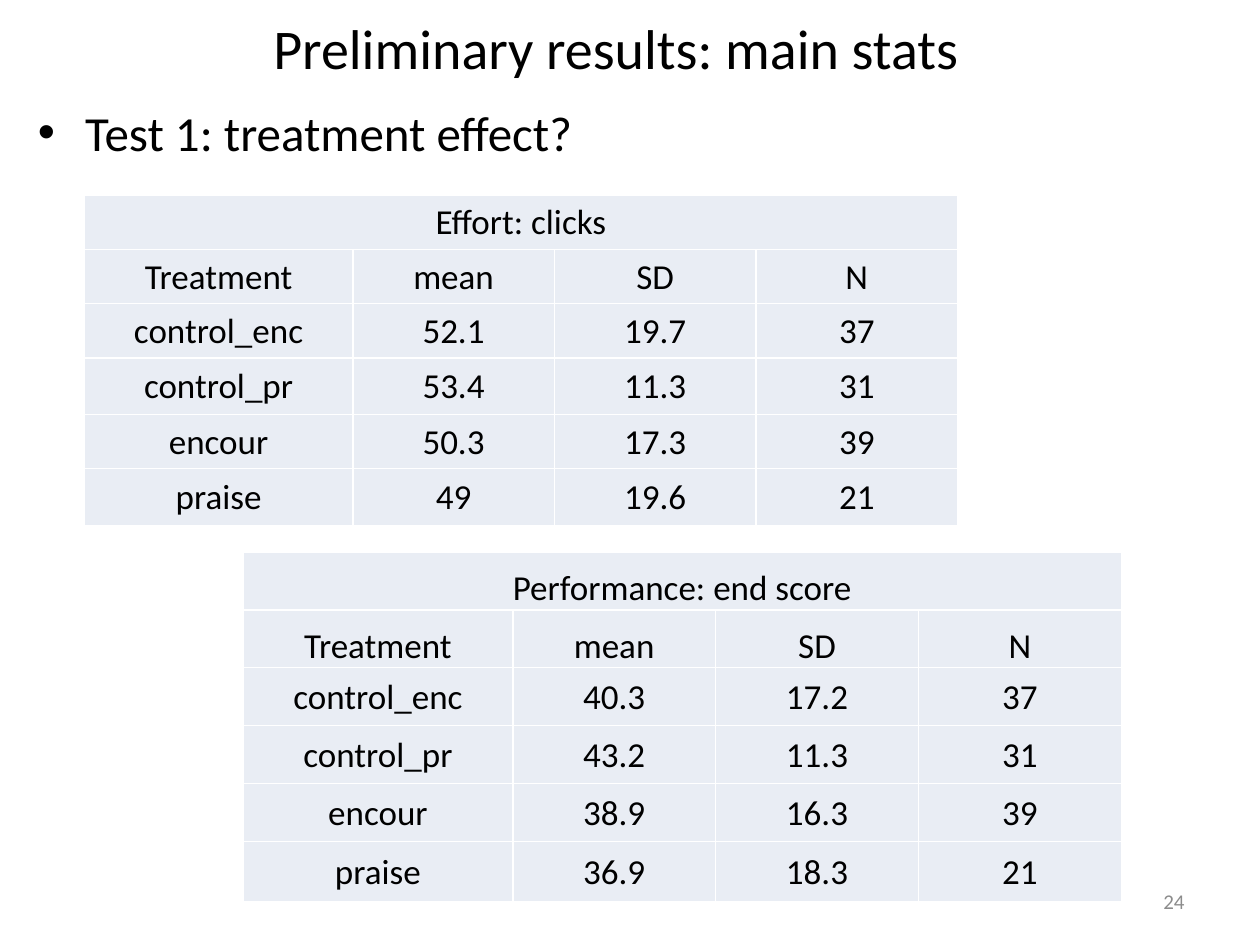
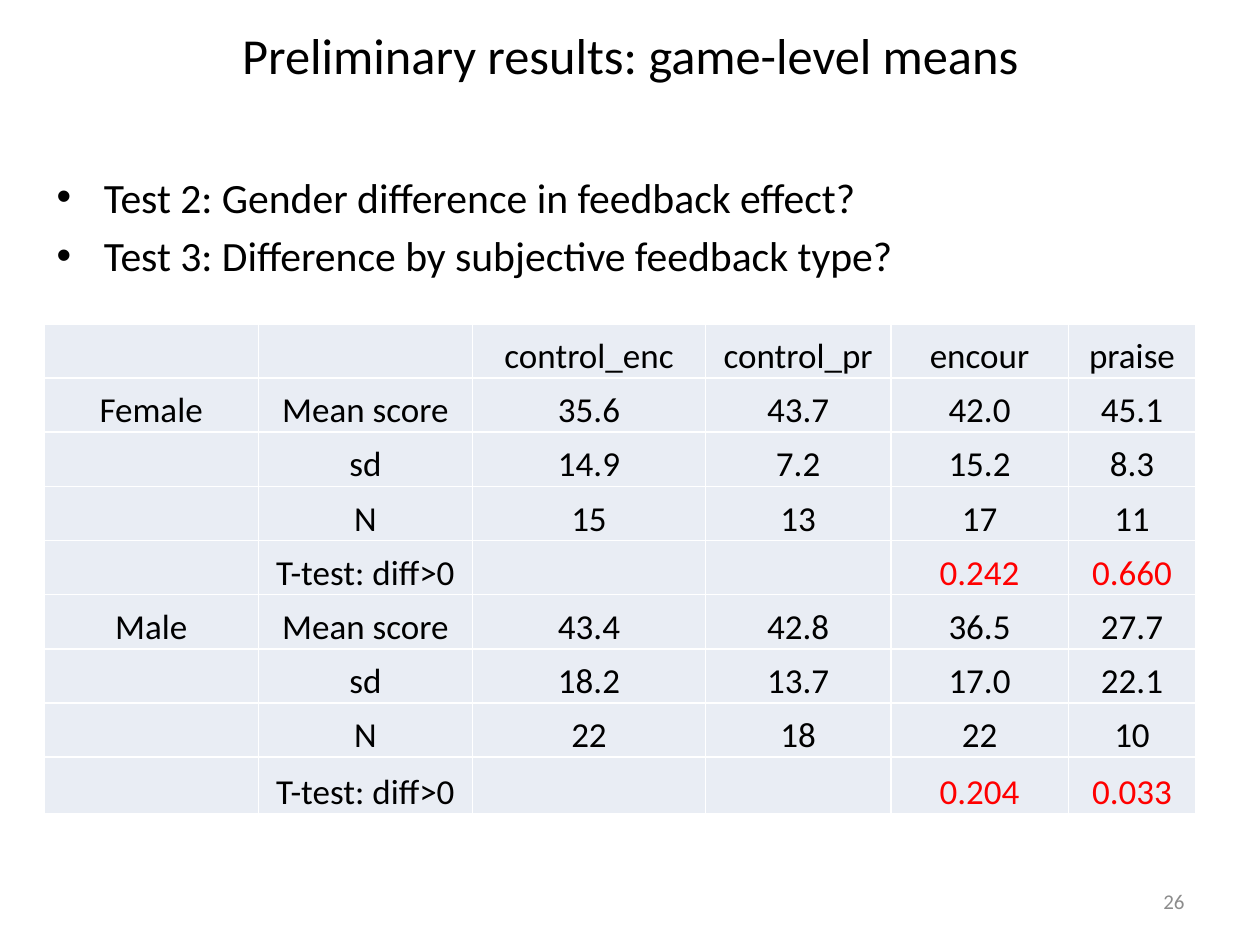
from dataclasses import dataclass

from lxml import etree
from pptx import Presentation
from pptx.dml.color import RGBColor
from pptx.enum.text import MSO_ANCHOR, MSO_AUTO_SIZE, PP_ALIGN
from pptx.oxml.ns import qn
from pptx.util import Inches, Pt

LEFT, CENTER, RIGHT = PP_ALIGN.LEFT, PP_ALIGN.CENTER, PP_ALIGN.RIGHT
TOP, MIDDLE, BOTTOM = MSO_ANCHOR.TOP, MSO_ANCHOR.MIDDLE, MSO_ANCHOR.BOTTOM
NO_AUTOFIT = MSO_AUTO_SIZE.NONE
TITLE_AND_CONTENT = 1


@dataclass(frozen=True)
class Theme:
    font: str = "Calibri"
    text: str = "000000"
    muted: str = "8C8C8C"
    highlight: str = "FF0000"
    cell: str = "E9EDF4"
    border: str = "FFFFFF"
    border_width: float = 1
    table_size: float = 20
    number_size: float = 12
    item_gap: float = 0.2


def write(frame, *lines, size, color, font, align=LEFT, gap=0):
    """Put one paragraph per line into a text frame, gap points apart."""
    for index, line in enumerate(lines):
        paragraph = frame.paragraphs[0] if index == 0 else frame.add_paragraph()
        paragraph.alignment = align
        paragraph.space_before = Pt(gap if index else 0)
        run = paragraph.add_run()
        run.text = line
        run.font.name = font
        run.font.size = Pt(size)
        run.font.color.rgb = RGBColor.from_string(color)


def place(shape, left, top, width, height):
    shape.left, shape.top = Inches(left), Inches(top)
    shape.width, shape.height = Inches(width), Inches(height)


class Deck:
    def __init__(self, theme):
        self.theme = theme
        self.presentation = Presentation()
        self.presentation.slide_width = Inches(10)
        self.presentation.slide_height = Inches(7.5)
        self.slide = None

    def new_slide(self, number):
        layout = self.presentation.slide_layouts[TITLE_AND_CONTENT]
        self.slide = self.presentation.slides.add_slide(layout)
        page = self.slide.shapes.add_textbox(
            Inches(7.17), Inches(6.95), Inches(2.33), Inches(0.4))
        self.fill_frame(page.text_frame, str(number), anchor=MIDDLE, align=RIGHT,
                        size=self.theme.number_size, color=self.theme.muted)

    def fill_frame(self, frame, *lines, anchor, color=None, **style):
        frame.word_wrap = True
        frame.auto_size = NO_AUTOFIT
        frame.vertical_anchor = anchor
        write(frame, *lines, color=color or self.theme.text,
              font=self.theme.font, **style)

    def title(self, text, box, size):
        heading = self.slide.shapes.title
        place(heading, *box)
        self.fill_frame(heading.text_frame, text, anchor=MIDDLE,
                        align=CENTER, size=size)

    def questions(self, items, box, size):
        body = self.slide.placeholders[1]
        place(body, *box)
        self.fill_frame(body.text_frame, *items, anchor=TOP, size=size,
                        gap=round(size * self.theme.item_gap, 1))

    def table(self, rows, left, top, widths, heights, bottom_rows=0, spanned=False,
              is_highlight=lambda row, column: False):
        """Draw rows; the first bottom_rows of them sit at their cell bottoms."""
        table = self.slide.shapes.add_table(
            len(rows), len(widths), Inches(left), Inches(top),
            Inches(sum(widths)), Inches(sum(heights))).table
        table.first_row = table.horz_banding = False
        for column, width in zip(table.columns, widths):
            column.width = Inches(width)
        for row, height in zip(table.rows, heights):
            row.height = Inches(height)
        if spanned:
            table.cell(0, 0).merge(table.cell(0, len(widths) - 1))
        for r, row in enumerate(rows):
            for c in range(len(widths)):
                cell = table.cell(r, c)
                self.style_cell(cell, BOTTOM if r < bottom_rows else MIDDLE)
                value = row[c] if c < len(row) else ""
                if value:
                    color = (self.theme.highlight if is_highlight(row, c)
                             else self.theme.text)
                    write(cell.text_frame, value, size=self.theme.table_size,
                          color=color, font=self.theme.font, align=CENTER)

    def style_cell(self, cell, anchor):
        cell.vertical_anchor = anchor
        cell.margin_left = cell.margin_right = cell.margin_top = Inches(0.01)
        cell.margin_bottom = 0
        cell.fill.solid()
        cell.fill.fore_color.rgb = RGBColor.from_string(self.theme.cell)
        properties = cell._tc.get_or_add_tcPr()
        for index, side in enumerate(("a:lnL", "a:lnR", "a:lnT", "a:lnB")):
            line = etree.Element(qn(side), w=str(Pt(self.theme.border_width)))
            solid = etree.SubElement(line, qn("a:solidFill"))
            etree.SubElement(solid, qn("a:srgbClr"), val=self.theme.border)
            properties.insert(index, line)


TREATMENTS = ["control_enc", "control_pr", "encour", "praise"]
COUNTS = ["37", "31", "39", "21"]
STATS = ["Mean score", "sd", "N", "T-test: diff>0"]


def treatment_rows(caption, means, deviations):
    return [[caption], ["Treatment", "mean", "SD", "N"],
            *zip(TREATMENTS, means, deviations, COUNTS)]


def gender_rows(gender, *values):
    return [[gender if index == 0 else "", stat, *row]
            for index, (stat, row) in enumerate(zip(STATS, values))]


def main_stats(deck):
    deck.new_slide(24)
    deck.title("Preliminary results: main stats", (0.28, 0.03, 9.22, 0.69), 32)
    deck.questions(["Test 1: treatment effect?"], (0.2, 0.76, 9.13, 0.94), 28)
    performance = treatment_rows("Performance: end score",
                                 ["40.3", "43.2", "38.9", "36.9"],
                                 ["17.2", "11.3", "16.3", "18.3"])
    deck.table(performance, 1.93, 4.38, [2.14] + [1.61] * 3,
               [0.46] * 5 + [0.48], bottom_rows=2, spanned=True)
    effort = treatment_rows("Effort: clicks",
                            ["52.1", "53.4", "50.3", "49"],
                            ["19.7", "11.3", "17.3", "19.6"])
    deck.table(effort, 0.67, 1.55, [2.13] + [1.6] * 3,
               [0.43, 0.43, 0.43, 0.45, 0.43, 0.45], spanned=True)


def game_level_means(deck):
    deck.new_slide(26)
    deck.title("Preliminary results: game-level means",
               (0.43, 0.13, 9.15, 0.61), 28.8)
    deck.questions(["Test 2: Gender difference in feedback effect?",
                    "Test 3: Difference by subjective feedback type?"],
                   (0.35, 1.31, 9.13, 0.87), 23.8)
    rows = [
        ["", "", *TREATMENTS],
        *gender_rows("Female",
                     ["35.6", "43.7", "42.0", "45.1"],
                     ["14.9", "7.2", "15.2", "8.3"],
                     ["15", "13", "17", "11"],
                     ["", "", "0.242", "0.660"]),
        *gender_rows("Male",
                     ["43.4", "42.8", "36.5", "27.7"],
                     ["18.2", "13.7", "17.0", "22.1"],
                     ["22", "18", "22", "10"],
                     ["", "", "0.204", "0.033"]),
    ]
    deck.table(rows, 0.35, 2.57, [1.7, 1.7, 1.85, 1.47, 1.41, 1.01],
               [0.43] * 8 + [0.45], bottom_rows=len(rows),
               is_highlight=lambda row, column: row[1] == STATS[-1] and column > 1)


def main():
    deck = Deck(Theme())
    main_stats(deck)
    game_level_means(deck)
    deck.presentation.save("out.pptx")


if __name__ == "__main__":
    main()
